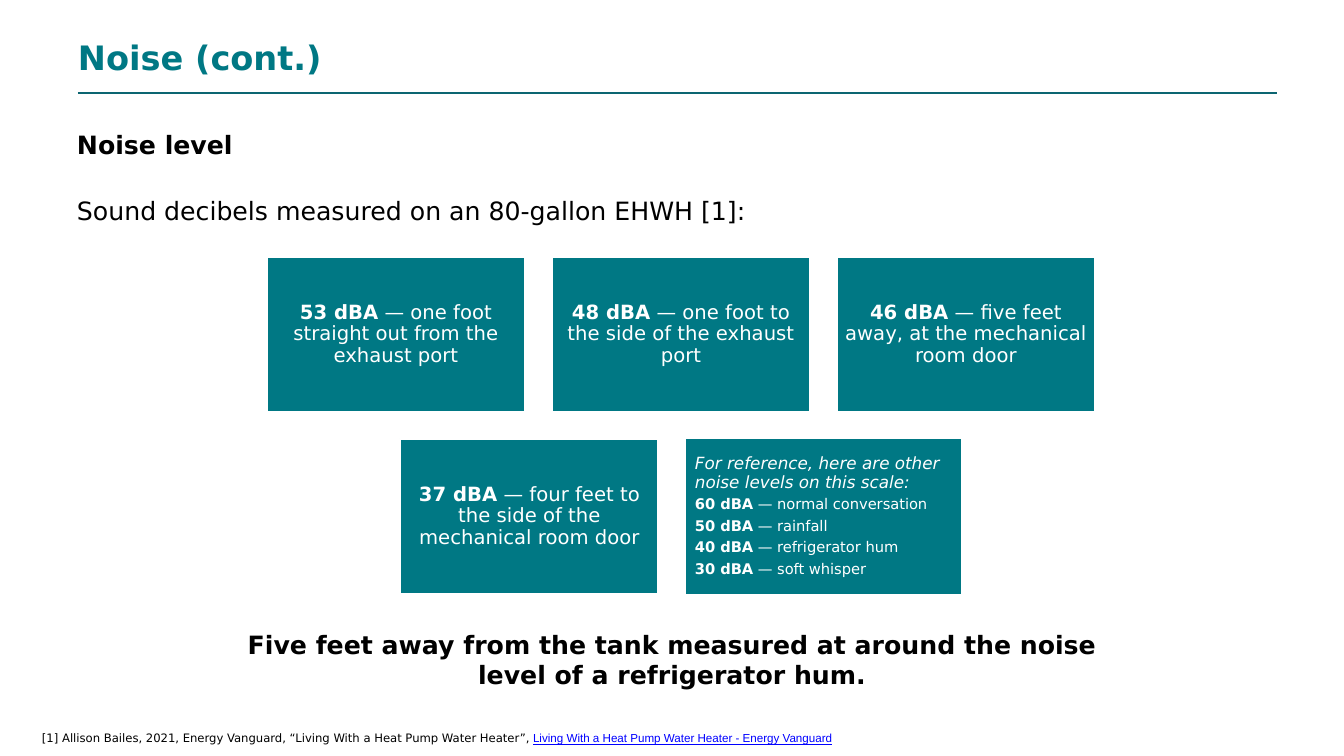
from pptx import Presentation
from pptx.dml.color import RGBColor
from pptx.enum.shapes import MSO_CONNECTOR as CONN, MSO_SHAPE as SHAPE
from pptx.enum.text import MSO_ANCHOR as ANCHOR, PP_ALIGN as ALIGN
from pptx.oxml.ns import qn
from pptx.util import Pt
from lxml import etree

# Content: each paragraph is a list of (text, run format) pairs
BOLD = dict(bold=True)
TITLE = "Noise (cont.)"
HEADING = "Noise level"
INTRO = "Sound decibels measured on an 80-gallon EHWH [1]:"
READINGS = [
    [("53 dBA", "one foot straight out from the exhaust port"),
     ("48 dBA", "one foot to the side of the exhaust port"),
     ("46 dBA", "five feet away, at the mechanical room door")],
    [("37 dBA", "four feet to the side of the mechanical room door")],
]
REFERENCE_INTRO = "For reference, here are other noise levels on this scale:"
REFERENCES = [("60 dBA", "normal conversation"), ("50 dBA", "rainfall"),
              ("40 dBA", "refrigerator hum"), ("30 dBA", "soft whisper")]
TAKEAWAY = ("Five feet away from the tank measured at around the noise "
            "level of a refrigerator hum.")
SOURCE = ("[1] Allison Bailes, 2021, Energy Vanguard, "
          "“Living With a Heat Pump Water Heater”, ")
SOURCE_LINK = "Living With a Heat Pump Water Heater - Energy Vanguard"

# Layout in px
PX = 914400 / 100.8
TEAL, RULE, WHITE, BLACK, LINK = "007884", "0C6571", "FFFFFF", "000000", "0000FF"
FONT = "DejaVu Sans"
CARD_W, CARD_H, REF_W, REF_H = 259, 155, 277, 157
PITCH, ROW_TOPS, CENTER = 285, (257, 439), 681


def px(n):
    return round(n * PX)


def rgb(color):
    return RGBColor.from_string(color)


def level(label, place, **fmt):
    return [(label, dict(fmt, bold=True)), (f" — {place}", fmt)]


def write(sp, paragraphs, size=18, color=BLACK, align=ALIGN.LEFT, anchor=ANCHOR.TOP,
          insets=(10, 5, 10, 5), spacing=None, before=0, after=0):
    tf = sp.text_frame
    tf.word_wrap = True
    tf.vertical_anchor = anchor
    tf.margin_left, tf.margin_top, tf.margin_right, tf.margin_bottom = map(px, insets)
    for i, runs in enumerate(paragraphs):
        p = tf.paragraphs[0] if i == 0 else tf.add_paragraph()
        p.alignment = align
        if spacing:
            p.line_spacing = spacing
        p.space_before = Pt(before if i else 0)
        p.space_after = Pt(after)
        for text, fmt in runs:
            r = p.add_run()
            r.text = text
            f = r.font
            f.name = fmt.get("font", FONT)
            f.size = Pt(fmt.get("size", size))
            f.color.rgb = rgb(fmt.get("color", color))
            f.bold = fmt.get("bold", False)
            f.italic = fmt.get("italic", False)
            f.underline = fmt.get("underline", False)


def text_box(x, y, w, h, paragraphs, **fmt):
    write(s.shapes.add_textbox(px(x), px(y), px(w), px(h)), paragraphs, **fmt)


def card(x, y, w, h, paragraphs, **fmt):
    sp = s.shapes.add_shape(SHAPE.RECTANGLE, px(x), px(y), px(w), px(h))
    sp.shadow.inherit = False
    sp.fill.solid()
    sp.fill.fore_color.rgb = rgb(TEAL)
    sp.line.color.rgb = rgb(WHITE)
    sp.line.width = Pt(2)
    write(sp, paragraphs, color=WHITE, anchor=ANCHOR.MIDDLE, spacing=0.9, **fmt)


prs = Presentation()
prs.slide_width, prs.slide_height = px(1344), px(756)
s = prs.slides.add_slide(prs.slide_layouts[6])

# Title and rule
text_box(68, 30, 1064, 54, [[(TITLE, BOLD)]], size=24, color=TEAL, anchor=ANCHOR.MIDDLE)
rule = s.shapes.add_connector(CONN.STRAIGHT, px(78), px(93), px(1277), px(93))
rule.line.color.rgb = rgb(RULE)
rule.line.width = Pt(1.5)
etree.SubElement(rule._element.spPr, qn("a:effectLst"))

# Heading and introduction
text_box(67, 124, 1108, 104, [[(HEADING, BOLD)], [(INTRO, {})]], before=25.5)

# Reading cards, each row centred; the reference card ends the second row
row_widths = (2 * PITCH + CARD_W, PITCH + REF_W)
for row, top, width in zip(READINGS, ROW_TOPS, row_widths):
    left = CENTER - width / 2
    for i, reading in enumerate(row):
        card(left + i * PITCH, top, CARD_W, CARD_H, [level(*reading)],
             size=14, align=ALIGN.CENTER, insets=(6, 6, 6, 6))
reference = [[(REFERENCE_INTRO, dict(size=12, italic=True))]]
reference += [level(*item) for item in REFERENCES]
card(left + PITCH, ROW_TOPS[1] - 1, REF_W, REF_H, reference,
     size=10.5, insets=(10, 5, 5, 5), after=4)

# Takeaway
text_box(207, 624, 930, 70, [[(TAKEAWAY, BOLD)]], align=ALIGN.CENTER)

# Source
link = dict(font="Arial", color=LINK, underline=True)
text_box(32, 726, 900, 24, [[(SOURCE, {}), (SOURCE_LINK, link)]],
         size=8.3, anchor=ANCHOR.MIDDLE)

prs.save("out.pptx")
